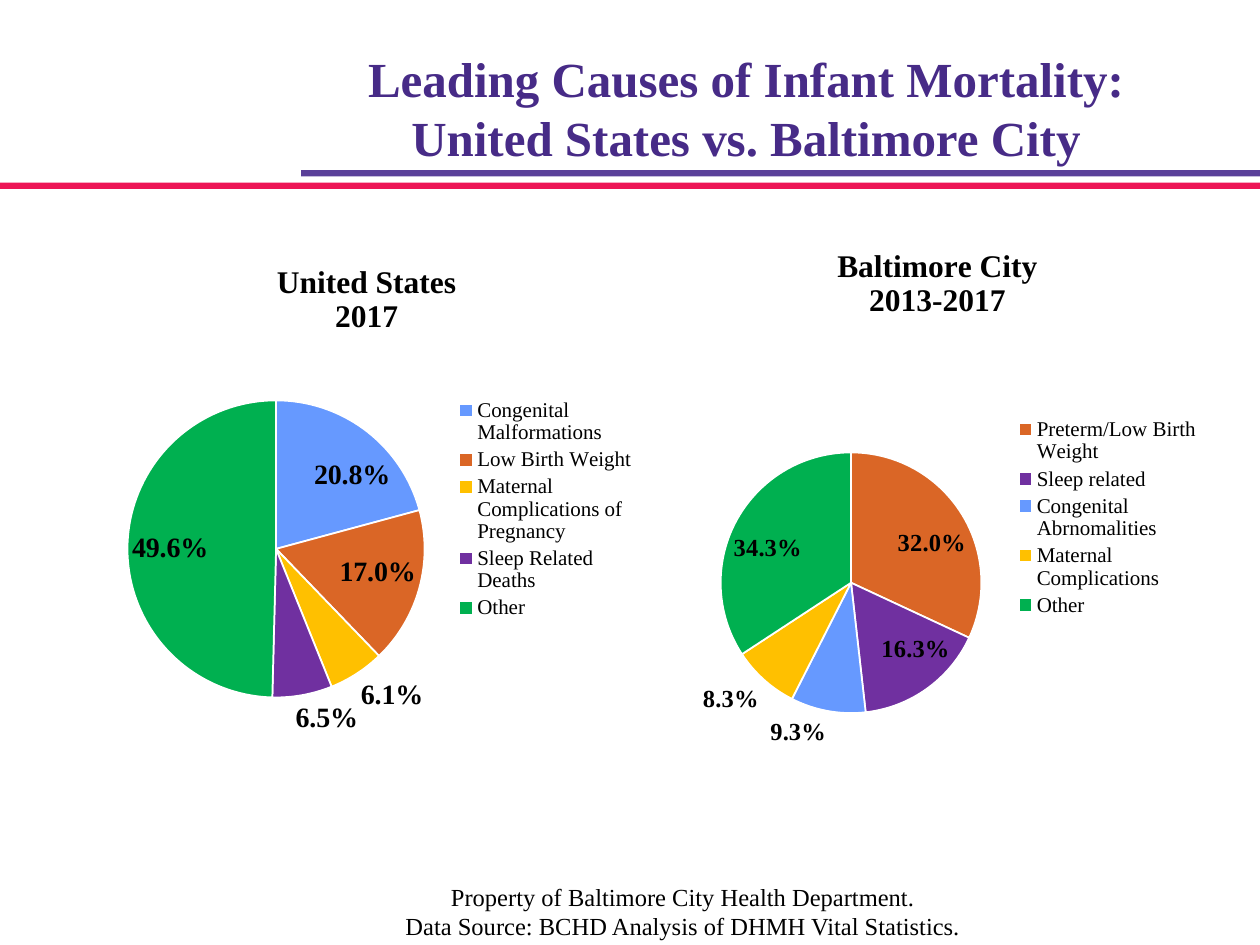
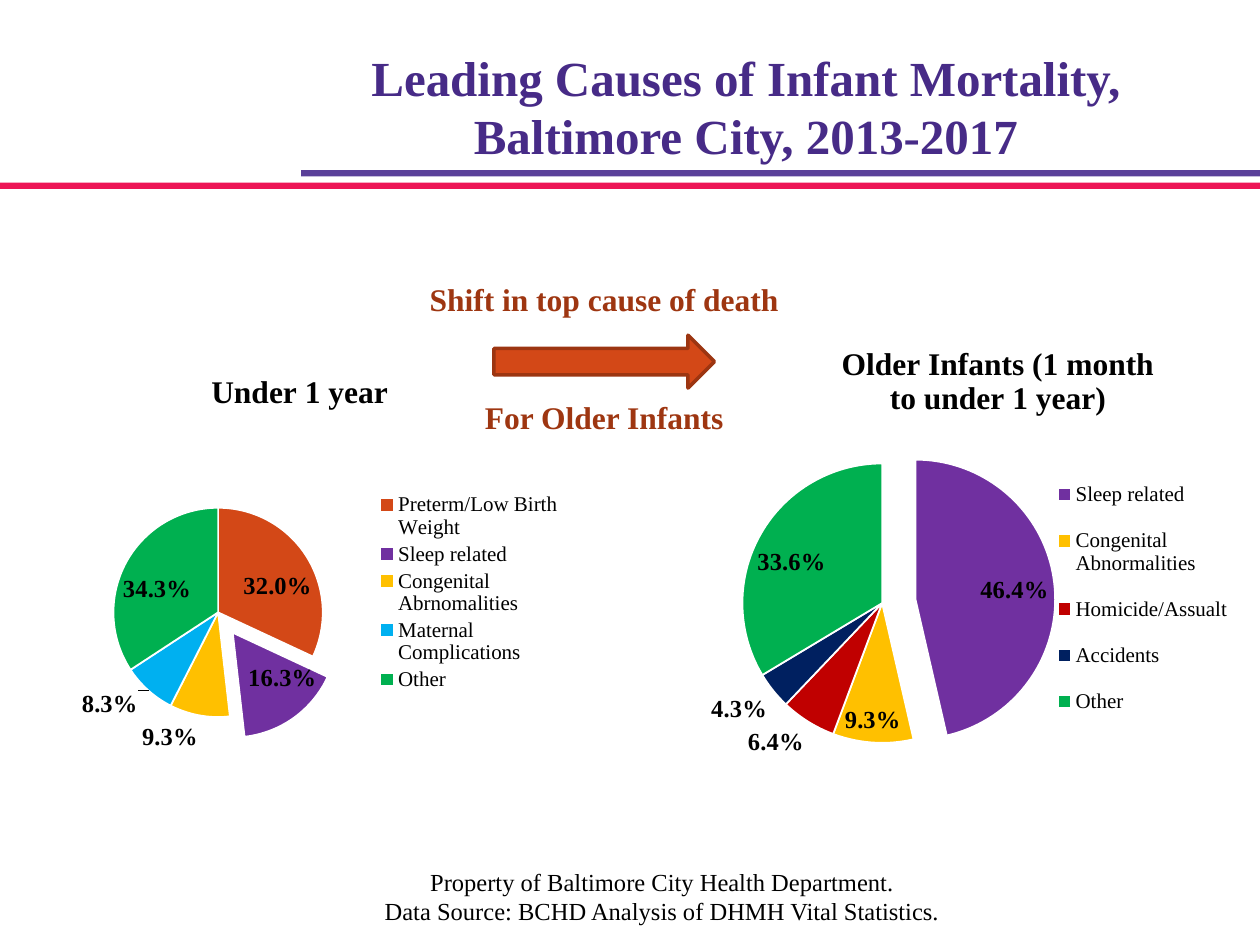
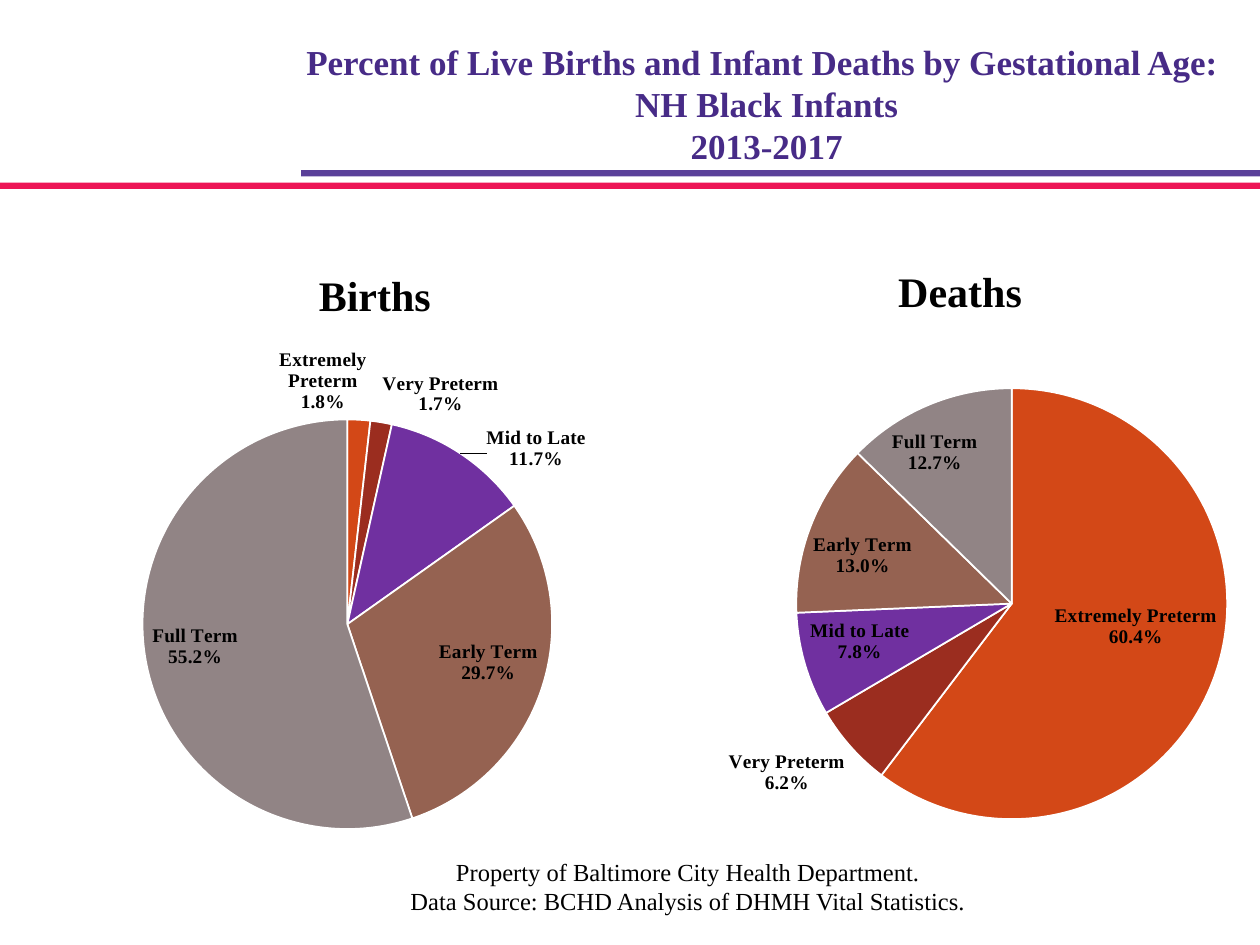
from lxml import etree
from pptx import Presentation
from pptx.chart.data import CategoryChartData
from pptx.dml.color import RGBColor
from pptx.enum import chart as charts, shapes, text
from pptx.oxml.ns import qn
from pptx.util import Inches, Pt

FONT = "Times New Roman"
BLACK = RGBColor(0x00, 0x00, 0x00)
WHITE = RGBColor(0xFF, 0xFF, 0xFF)
TITLE_PURPLE = RGBColor(0x47, 0x2B, 0x87)
BAND_PURPLE = RGBColor(0x5A, 0x40, 0x99)
BAND_PINK = RGBColor(0xED, 0x15, 0x56)
ARROW_EDGE = RGBColor(0x9C, 0x35, 0x11)
CALLOUT = RGBColor(0x9E, 0x36, 0x11)
ORANGE = RGBColor(0xDA, 0x66, 0x26)
RUST = RGBColor(0xD3, 0x48, 0x17)
BRICK = RGBColor(0x9B, 0x2D, 0x1F)
BROWN = RGBColor(0x95, 0x62, 0x51)
GREY = RGBColor(0x91, 0x84, 0x85)
PURPLE = RGBColor(0x70, 0x30, 0xA0)
BLUE = RGBColor(0x66, 0x99, 0xFF)
SKY = RGBColor(0x00, 0xB0, 0xF0)
NAVY = RGBColor(0x00, 0x20, 0x60)
GOLD = RGBColor(0xFF, 0xC0, 0x00)
RED = RGBColor(0xC0, 0x00, 0x00)
GREEN = RGBColor(0x00, 0xB0, 0x50)

FOOTER = ("Property of Baltimore City Health Department.\n"
          "Data Source: BCHD Analysis of DHMH Vital Statistics.")
CITY_CAUSES = ["Preterm/Low Birth Weight", "Sleep related", "Congenital Abrnomalities",
               "Maternal Complications", "Other"]
CITY_VALUES = [32.0, 16.3, 9.3, 8.3, 34.3]
TERMS = ["Extremely Preterm", "Very Preterm", "Mid to Late", "Early Term", "Full Term"]
TERM_COLORS = [RUST, BRICK, PURPLE, BROWN, GREY]

# Boxes are left, top, width, height in inches; "pie" is left, top, diameter
SLIDES = [
    {"title": "Leading Causes of Infant Mortality:\vUnited States vs. Baltimore City",
     "title_box": (1.42, 0, 9, 1.25), "title_size": 28, "title_inset": 0.5,
     "footer_box": (1.42, 6.95, 8, 0.4),
     "charts": [
         {"box": (5.25, 1.79, 4.38, 4.63), "title": "Baltimore City\n2013-2017",
          "categories": CITY_CAUSES, "values": CITY_VALUES,
          "colors": [ORANGE, PURPLE, BLUE, GOLD, GREEN],
          "pie": (5.72, 3.59, 2.07), "legend": (8.03, 3.28, 1.52, 1.65)},
         {"box": (0.67, 1.92, 4.48, 4.25), "title": "United States\n2017",
          "categories": ["Congenital Malformations", "Low Birth Weight",
                         "Maternal Complications of Pregnancy",
                         "Sleep Related Deaths", "Other"],
          "values": [20.8, 17.0, 6.1, 6.5, 49.6],
          "colors": [BLUE, ORANGE, GOLD, PURPLE, GREEN], "label_size": 16,
          "pie": (1.01, 3.18, 2.36), "legend": (3.59, 3.13, 1.48, 1.82)}]},
    {"title": "Leading Causes of Infant Mortality,\vBaltimore City, 2013-2017",
     "title_box": (1.42, -0.01, 9, 1.25), "title_size": 28, "title_inset": 0.5,
     "footer_box": (1.42, 6.83, 7.67, 0.4),
     "charts": [
         {"box": (0.31, 2.74, 4.25, 3.91), "title": "Under 1 year", "title_at": (1.63, 2.91),
          "categories": CITY_CAUSES, "values": CITY_VALUES,
          "colors": [RUST, PURPLE, GOLD, SKY, GREEN], "exploded": 1,
          "pie": (0.9, 4.03, 1.66), "legend": (2.96, 3.88, 1.52, 1.64)},
         {"box": (5.5, 2.25, 4.34, 4.41),
          "title": "Older Infants (1 month\nto under 1 year)", "title_at": (6.65, 2.71),
          "categories": ["Sleep related", "Congenital Abnormalities", "Homicide/Assualt",
                         "Accidents", "Other"],
          "values": [46.4, 9.3, 6.4, 4.3, 33.6],
          "colors": [PURPLE, GOLD, RED, NAVY, GREEN], "exploded": 0,
          "pie": (5.89, 3.68, 2.22), "legend": (8.33, 3.65, 1.48, 2.2)}]},
    {"title": "Percent of Live Births and Infant Deaths by Gestational Age: \v"
              "NH Black Infants\v2013-2017",
     "title_box": (2, 0, 8.17, 1.64), "title_size": 20, "title_inset": 0.05,
     "footer_box": (1.67, 6.75, 7.58, 0.61),
     "charts": [
         {"box": (-0.14, 1.92, 6.23, 4.81), "title": "Births", "title_size": 24,
          "categories": TERMS, "values": [1.8, 1.7, 11.7, 29.7, 55.2],
          "colors": TERM_COLORS, "label_size": 11, "pie": (1.13, 3.33, 3.25)},
         {"box": (4.83, 1.89, 5.58, 4.82), "title": "Deaths", "title_size": 24,
          "categories": TERMS, "values": [60.4, 6.2, 7.8, 13.0, 12.7],
          "colors": TERM_COLORS, "label_size": 11, "pie": (6.32, 3.08, 3.42)}]},
]


def add_text(slide, box, content, size, color, bold=False):
    frame = slide.shapes.add_textbox(*map(Inches, box)).text_frame
    frame.word_wrap = True
    frame.text = content
    for paragraph in frame.paragraphs:
        paragraph.alignment = text.PP_ALIGN.CENTER
        paragraph.font.name = FONT
        paragraph.font.size = Pt(size)
        paragraph.font.bold = bold
        paragraph.font.color.rgb = color


def place_in_chart(chart, tag, index, area, box):
    """Fix a chart part at a slide position, as fractions of the chart box."""
    element = chart.element.find(".//" + qn(tag))
    for old_layout in element.findall(qn("c:layout")):
        element.remove(old_layout)
    layout = etree.Element(qn("c:layout"))
    element.insert(index, layout)
    manual = etree.SubElement(layout, qn("c:manualLayout"))
    left, top, width, height = box
    fractions = {"x": (area[0] - left) / width, "y": (area[1] - top) / height}
    if len(area) == 4:
        fractions.update(w=area[2] / width, h=area[3] / height)
    if tag == "c:plotArea":
        etree.SubElement(manual, qn("c:layoutTarget"), val="inner")
    for mode in ("xMode", "yMode"):
        etree.SubElement(manual, qn("c:" + mode), val="edge")
    for name, fraction in fractions.items():
        etree.SubElement(manual, qn("c:" + name), val=f"{fraction:.3f}")


presentation = Presentation()
presentation.slide_width = Inches(10)
presentation.slide_height = Inches(7.5)
title_only = presentation.slide_layouts[5]

for number, content in enumerate(SLIDES):
    slide = presentation.slides.add_slide(title_only)

    # Bands, moved to the layout so that every slide shares them
    if number == 0:
        for box, color in (((2.39, 1.35, 7.75, 0.05), BAND_PURPLE),
                           ((0, 1.45, 10, 0.05), BAND_PINK)):
            band = slide.shapes.add_shape(shapes.MSO_SHAPE.RECTANGLE, *map(Inches, box))
            band.shadow.inherit = False
            band.fill.solid()
            band.fill.fore_color.rgb = color
            band.line.fill.background()
            title_only.shapes.element.append(band.element)

    # Title
    title = slide.shapes.title
    title.left, title.top, title.width, title.height = map(Inches, content["title_box"])
    frame = title.text_frame
    frame.text = content["title"]
    frame.auto_size = text.MSO_AUTO_SIZE.NONE
    frame.vertical_anchor = text.MSO_ANCHOR.MIDDLE
    frame.margin_top = Inches(content["title_inset"])
    paragraph = frame.paragraphs[0]
    paragraph.alignment = text.PP_ALIGN.CENTER
    paragraph.font.name = FONT
    paragraph.font.size = Pt(content["title_size"])
    paragraph.font.bold = True
    paragraph.font.color.rgb = TITLE_PURPLE

    # Footer
    add_text(slide, content["footer_box"], FOOTER, 14, BLACK)

    # Pie charts
    for pie in content["charts"]:
        box = pie["box"]
        data = CategoryChartData(number_format="0.0")
        data.categories = pie["categories"]
        data.add_series("Series 1", pie["values"])
        chart = slide.shapes.add_chart(charts.XL_CHART_TYPE.PIE, *map(Inches, box), data).chart
        chart.font.name = FONT
        chart.font.size = Pt(10)
        chart.font.color.rgb = BLACK

        chart.chart_title.text_frame.text = pie["title"]
        for paragraph in chart.chart_title.text_frame.paragraphs:
            paragraph.font.name = FONT
            paragraph.font.size = Pt(pie.get("title_size", 18))
            paragraph.font.bold = True
            paragraph.font.color.rgb = BLACK
        if "title_at" in pie:
            place_in_chart(chart, "c:title", 1, pie["title_at"], box)

        plot = chart.plots[0]
        plot.vary_by_categories = True
        left, top, diameter = pie["pie"]
        place_in_chart(chart, "c:plotArea", 0, (left, top, diameter, diameter), box)
        for index, color in enumerate(pie["colors"]):
            slice_format = plot.series[0].points[index].format
            slice_format.fill.solid()
            slice_format.fill.fore_color.rgb = color
            slice_format.line.color.rgb = WHITE
            slice_format.line.width = Pt(1)
        if "exploded" in pie:
            point = chart.element.findall(".//" + qn("c:dPt"))[pie["exploded"]]
            explosion = etree.Element(qn("c:explosion"), val="24")
            point.find(qn("c:spPr")).addprevious(explosion)

        plot.has_data_labels = True
        labels = plot.data_labels
        labels.number_format = '0.0"%"'
        labels.number_format_is_linked = False
        labels.position = charts.XL_LABEL_POSITION.BEST_FIT
        labels.show_percentage = False
        labels.show_value = True
        labels.font.name = FONT
        labels.font.size = Pt(pie.get("label_size", 14))
        labels.font.bold = True
        labels.font.color.rgb = BLACK

        chart.has_legend = "legend" in pie
        if chart.has_legend:
            chart.legend.position = charts.XL_LEGEND_POSITION.RIGHT
            chart.legend.include_in_layout = False
            chart.legend.font.name = FONT
            chart.legend.font.size = Pt(12)
            chart.legend.font.color.rgb = BLACK
            place_in_chart(chart, "c:legend", 1, pie["legend"], box)
        else:
            # Category name above the value
            labels.show_category_name = True
            separator = etree.Element(qn("c:separator"))
            separator.text = "\n"
            chart.element.find(".//" + qn("c:showBubbleSize")).addnext(separator)

    # Arrow and its callouts between the two pies
    if number == 1:
        arrow = slide.shapes.add_shape(shapes.MSO_SHAPE.RIGHT_ARROW, Inches(3.92), Inches(2.66),
                                       Inches(1.75), Inches(0.42))
        arrow.shadow.inherit = False
        arrow.fill.solid()
        arrow.fill.fore_color.rgb = RUST
        arrow.line.color.rgb = ARROW_EDGE
        arrow.line.width = Pt(2)
        add_text(slide, (3.21, 2.17, 3.17, 0.4), "Shift in top cause of death", 18, CALLOUT, True)
        add_text(slide, (3.44, 3.11, 2.71, 0.4), "For Older Infants", 18, CALLOUT, True)

presentation.save("out.pptx")
